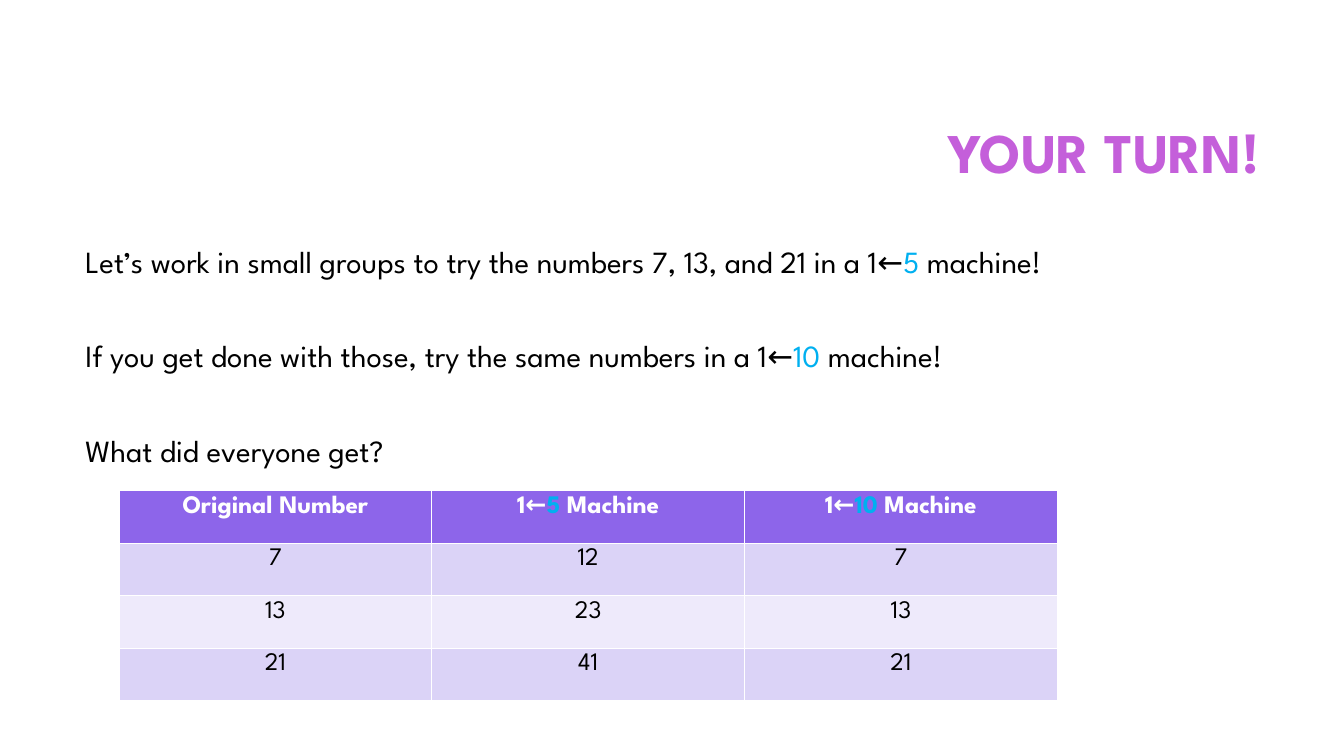
"""Build the "Your turn!" slide with its machine exercise and answer table."""
import pptx
import pptx.dml.color
import pptx.enum.text
import pptx.util

Pt = pptx.util.Pt
RGBColor = pptx.dml.color.RGBColor
ALIGN = pptx.enum.text.PP_ALIGN
ANCHOR = pptx.enum.text.MSO_ANCHOR

ORCHID = RGBColor(0xC4, 0x5F, 0xDA)
PURPLE = RGBColor(0x8D, 0x65, 0xEA)
LILAC = RGBColor(0xDB, 0xD3, 0xF7)
PALE_LILAC = RGBColor(0xEE, 0xEA, 0xFB)
BLUE = RGBColor(0x00, 0xB0, 0xF0)
BLACK = RGBColor(0, 0, 0)
WHITE = RGBColor(0xFF, 0xFF, 0xFF)
FONT = "League Spartan"

TITLE = "YOUR TURN!"
INSTRUCTIONS = [
    ("Let’s work in small groups to try the numbers 7, 13, and 21 in a 1←", "5", " machine!"),
    ("If you get done with those, try the same numbers in a 1←", "10", " machine!"),
    ("What did everyone get?",),
]
ANSWERS = [
    [("Original Number",), ("1←", "5", " Machine"), ("1←", "10", " Machine")],
    [("7",), ("12",), ("7",)],
    [("13",), ("23",), ("13",)],
    [("21",), ("41",), ("21",)],
]

TITLE_BOX = (228.25, 60.5, 678.25, 101.5)
INSTRUCTIONS_BOX = (54, 172.8, 851.75, 316.8)
ANSWERS_BOX = (85, 350.6, 670.3, 149.8)
INSTRUCTION_GAP = 43.75

TITLE_FORMAT = {"name": FONT, "size": Pt(40), "bold": True}
INSTRUCTION_FORMAT = {"name": FONT, "size": Pt(22), "bold": False}
HEADER_FORMAT = {"name": FONT, "size": Pt(18), "bold": True}
ANSWER_FORMAT = {"name": FONT, "size": Pt(18), "bold": False}


def write(paragraph, pieces, font_format, color):
    """Add the pieces as runs, the second one (the machine's base) in blue."""
    for position, piece in enumerate(pieces):
        run = paragraph.add_run()
        run.text = piece
        for attribute, value in font_format.items():
            setattr(run.font, attribute, value)
        run.font.color.rgb = BLUE if position == 1 else color


def add_title(slide):
    """Place the heading at the right."""
    title = slide.shapes.title
    title.left, title.top, title.width, title.height = map(Pt, TITLE_BOX)
    frame = title.text_frame
    frame.auto_size = pptx.enum.text.MSO_AUTO_SIZE.NONE
    frame.vertical_anchor = ANCHOR.MIDDLE
    heading = frame.paragraphs[0]
    heading.alignment = ALIGN.RIGHT
    heading.line_spacing = 0.9
    write(heading, (TITLE,), TITLE_FORMAT, ORCHID)


def add_instructions(slide):
    """Add the widely spaced instructions."""
    frame = slide.shapes.add_textbox(*map(Pt, INSTRUCTIONS_BOX)).text_frame
    frame.word_wrap = True
    for number, pieces in enumerate(INSTRUCTIONS):
        instruction = frame.add_paragraph() if number else frame.paragraphs[0]
        instruction.line_spacing = 0.9
        if number:
            instruction.space_before = Pt(INSTRUCTION_GAP)
        write(instruction, pieces, INSTRUCTION_FORMAT, BLACK)


def add_answers(slide):
    """Add the table of machine codes."""
    rows, columns = len(ANSWERS), len(ANSWERS[0])
    answers = slide.shapes.add_table(rows, columns, *map(Pt, ANSWERS_BOX)).table
    for row, entries in enumerate(ANSWERS):
        if row == 0:
            fill, font_format, color = PURPLE, HEADER_FORMAT, WHITE
        else:
            fill, font_format, color = (LILAC if row % 2 else PALE_LILAC), ANSWER_FORMAT, BLACK
        for column, pieces in enumerate(entries):
            cell = answers.cell(row, column)
            cell.fill.solid()
            cell.fill.fore_color.rgb = fill
            entry = cell.text_frame.paragraphs[0]
            entry.alignment = ALIGN.CENTER
            write(entry, pieces, font_format, color)


def main():
    """Assemble and save the slide."""
    deck = pptx.Presentation()
    deck.slide_width, deck.slide_height = Pt(960), Pt(540)
    slide = deck.slides.add_slide(deck.slide_layouts[5])
    add_title(slide)
    add_instructions(slide)
    add_answers(slide)
    deck.save("out.pptx")


if __name__ == "__main__":
    main()
